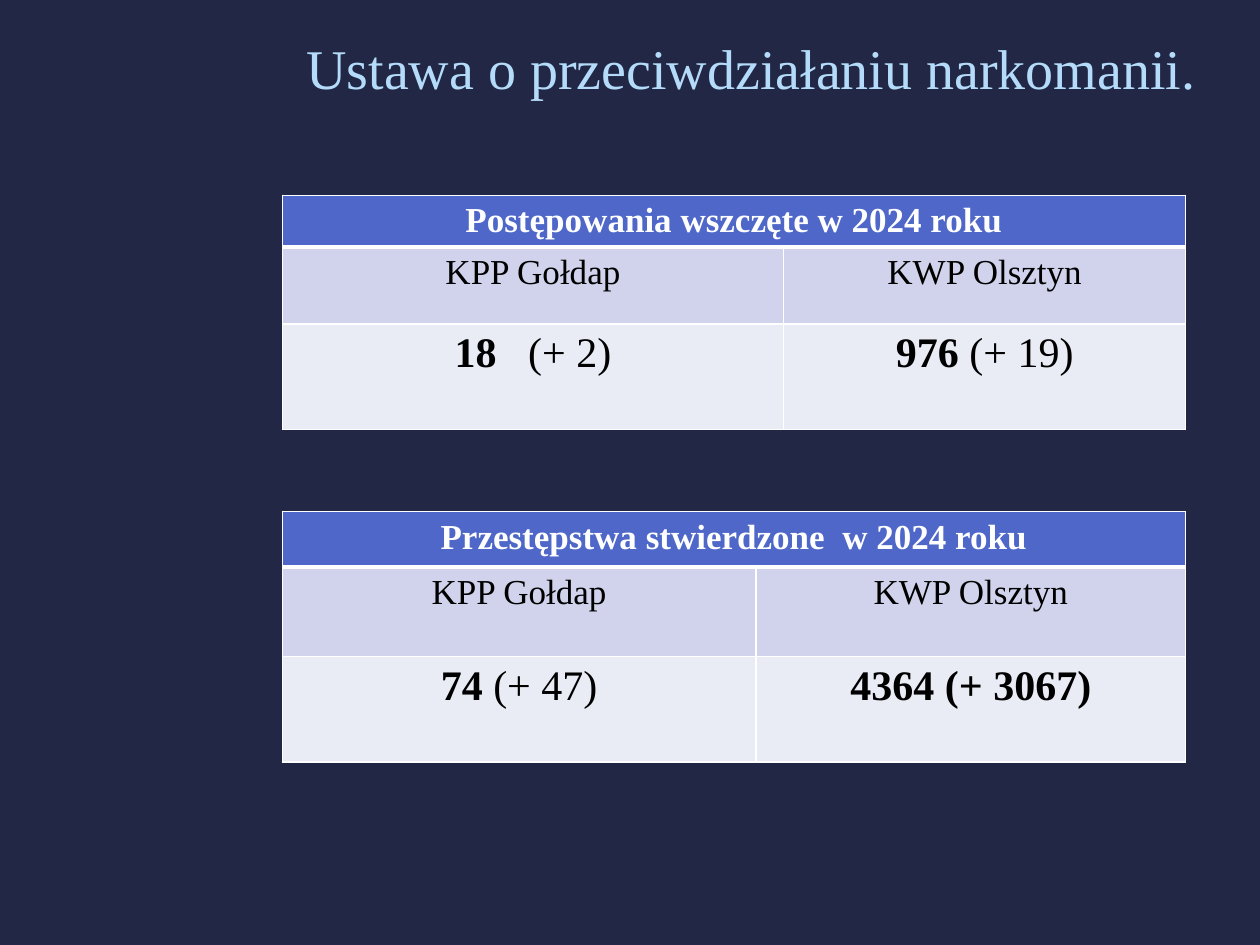
from lxml import etree
from pptx import Presentation
from pptx.dml.color import RGBColor
from pptx.enum.text import MSO_ANCHOR, PP_ALIGN
from pptx.oxml.ns import qn
from pptx.util import Inches, Pt

CENTER = PP_ALIGN.CENTER
MIDDLE = MSO_ANCHOR.MIDDLE
FONT = "Times New Roman"
COLORS = {
    "background": "212745",
    "title": "B4DCFA",
    "header": "4E67C8",
    "names": "D0D3EB",
    "values": "E9EBF5",
    "white": "FFFFFF",
    "black": "000000",
}
TITLE = "Ustawa o przeciwdziałaniu narkomanii."
UNITS = ["KPP Gołdap", "KWP Olsztyn"]
TABLES = [
    {
        "header": "Postępowania wszczęte w 2024 roku",
        "values": [[("18   ", True), ("(+ 2)", False)],
                   [("976", True), (" (+ 19)", False)]],
        "top": 1.55,
        "columns": [3.98, 3.19],
        "rows": [0.41, 0.61, 0.84],
    },
    {
        "header": "Przestępstwa stwierdzone  w 2024 roku",
        "values": [[("74 ", True), ("(+ 47)", False)],
                   [("4364 (+ 3067)", True)]],
        "top": 4.06,
        "columns": [3.76, 3.41],
        "rows": [0.44, 0.71, 0.84],
    },
]
TABLE_LEFT = 2.24
ROW_STYLES = [
    {"fill": "header", "color": "white", "size": 20},
    {"fill": "names", "color": "black", "size": 20},
    {"fill": "values", "color": "black", "size": 24},
]


def rgb(name):
    return RGBColor.from_string(COLORS[name])


def write_spans(para, spans, size, color):
    para.alignment = CENTER
    for text, bold in spans:
        span = para.add_run()
        span.text = text
        for name, value in {"name": FONT, "size": Pt(size), "bold": bold}.items():
            setattr(span.font, name, value)
        span.font.color.rgb = rgb(color)


def set_borders(cell, widths):
    properties = cell._tc.get_or_add_tcPr()
    for side, width in widths.items():
        line = etree.SubElement(properties, qn(f"a:ln{side}"), w=str(Pt(width)))
        fill = etree.SubElement(line, qn("a:solidFill"))
        etree.SubElement(fill, qn("a:srgbClr"), val=COLORS["white"])


def add_statistics(slide, content):
    columns, rows = content["columns"], content["rows"]
    table = slide.shapes.add_table(
        len(rows), len(columns), Inches(TABLE_LEFT), Inches(content["top"]),
        Inches(sum(columns)), Inches(sum(rows))).table
    for column, width in zip(table.columns, columns):
        column.width = Inches(width)
    for row, height in zip(table.rows, rows):
        row.height = Inches(height)
    table.cell(0, 0).merge(table.cell(0, len(columns) - 1))

    cells = [
        [[(content["header"], True)], []],
        [[(unit, False)] for unit in UNITS],
        content["values"],
    ]
    for row_index, (style, row) in enumerate(zip(ROW_STYLES, cells)):
        for column_index, spans in enumerate(row):
            cell = table.cell(row_index, column_index)
            set_borders(cell, {"L": 1, "R": 1,
                               "T": 3 if row_index == 1 else 1,
                               "B": 3 if row_index == 0 else 1})
            cell.fill.solid()
            cell.fill.fore_color.rgb = rgb(style["fill"])
            write_spans(cell.text_frame.paragraphs[0], spans,
                        style["size"], style["color"])


def main():
    deck = Presentation()
    deck.slide_width, deck.slide_height = Inches(10), Inches(7.5)
    slide = deck.slides.add_slide(deck.slide_layouts[5])
    slide.background.fill.solid()
    slide.background.fill.fore_color.rgb = rgb("background")

    title = slide.shapes.title
    place = {"left": 1.93, "top": 0, "width": 8.07, "height": 1.07}
    for name, value in place.items():
        setattr(title, name, Inches(value))
    title.text_frame.vertical_anchor = MIDDLE
    write_spans(title.text_frame.paragraphs[0], [(TITLE, False)], 32, "title")

    for content in TABLES:
        add_statistics(slide, content)
    deck.save("out.pptx")


if __name__ == "__main__":
    main()
